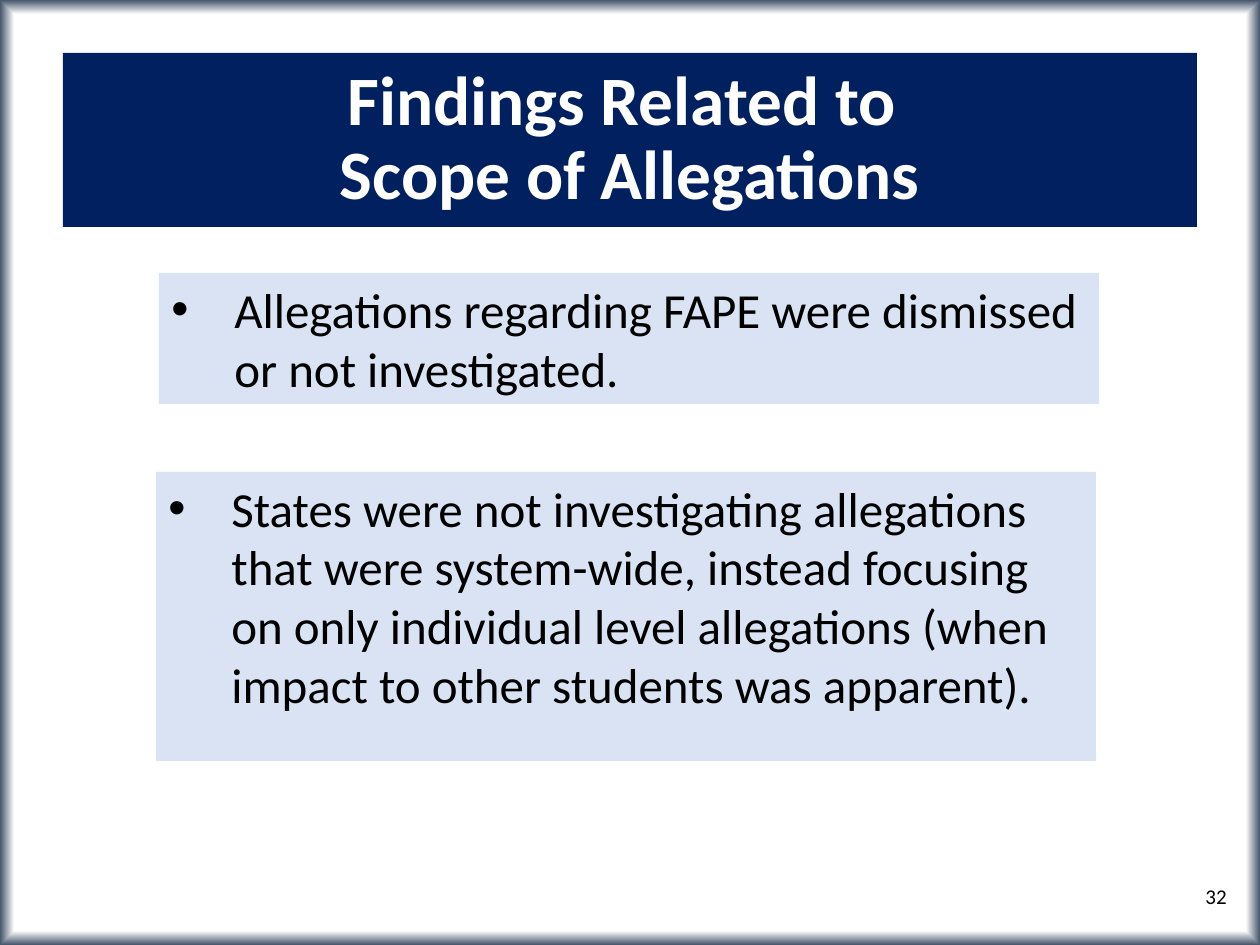
import dataclasses

import lxml.etree
import pptx
import pptx.dml.color
import pptx.enum.dml
import pptx.enum.shapes
import pptx.enum.text
import pptx.oxml.ns
import pptx.util

PX_PER_INCH = 126
ALIGN = pptx.enum.text.PP_ALIGN
ANCHOR = pptx.enum.text.MSO_ANCHOR


@dataclasses.dataclass(frozen=True)
class Theme:
    font: str = "Calibri"
    navy: str = "002060"
    pale_blue: str = "DAE3F3"
    slate: str = "44546A"
    white: str = "FFFFFF"
    black: str = "000000"
    title_size: float = 39.6
    body_size: float = 28
    number_size: float = 12


THEME = Theme()


def px(length):
    return pptx.util.Emu(round(length * pptx.util.Inches(1) / PX_PER_INCH))


def rgb(color):
    return pptx.dml.color.RGBColor.from_string(color)


def add_panel(slide, box, color):
    shape = slide.shapes.add_shape(
        pptx.enum.shapes.MSO_SHAPE.RECTANGLE, *map(px, box))
    shape.shadow.inherit = False
    shape.fill.solid()
    shape.fill.fore_color.rgb = rgb(color)
    shape.line.fill.background()
    return shape


def write(shape, text, size, color, alignment, anchor=ANCHOR.TOP, bold=False):
    """Set the text of a shape and return its paragraph."""
    text_frame = shape.text_frame
    text_frame.word_wrap = True
    text_frame.vertical_anchor = anchor
    text_frame.text = text
    paragraph = text_frame.paragraphs[0]
    paragraph.alignment = alignment
    for run in paragraph.runs:
        run.font.name = THEME.font
        run.font.size = pptx.util.Pt(size)
        run.font.bold = bold
        run.font.color.rgb = rgb(color)
    return paragraph


def add_bullet(paragraph, indent):
    properties = paragraph._p.get_or_add_pPr()
    properties.set("marL", str(px(indent)))
    properties.set("indent", str(-px(indent)))
    qn = pptx.oxml.ns.qn
    lxml.etree.SubElement(properties, qn("a:buFont"), typeface="Arial")
    lxml.etree.SubElement(properties, qn("a:buChar"), char="•")


def paint_background(slide):
    """White, shading to slate along all four edges."""
    fill = slide.background.fill
    fill.gradient()
    stops = ((0.97, THEME.white), (1, THEME.slate))
    for stop, (position, color) in zip(fill.gradient_stops, stops):
        stop.position = position
        stop.color.rgb = rgb(color)
    qn = pptx.oxml.ns.qn
    linear = next(slide.background._cSld.iter(qn("a:lin")))
    shading = linear.makeelement(qn("a:path"), {"path": "shape"})
    middle = dict.fromkeys("ltrb", "50000")
    lxml.etree.SubElement(shading, qn("a:fillToRect"), middle)
    linear.getparent().replace(linear, shading)


def add_title(slide, box, text):
    shape = add_panel(slide, box, THEME.navy)
    paragraph = write(shape, text, THEME.title_size, THEME.white,
                      ALIGN.CENTER, ANCHOR.MIDDLE, bold=True)
    paragraph.line_spacing = 0.9


def add_finding(slide, box, text):
    shape = add_panel(slide, box, THEME.pale_blue)
    paragraph = write(shape, text, THEME.body_size, THEME.black, ALIGN.LEFT)
    add_bullet(paragraph, 63)


def add_slide_number(slide, box, text):
    shape = slide.shapes.add_textbox(*map(px, box))
    write(shape, text, THEME.number_size, THEME.black, ALIGN.RIGHT)


def main():
    presentation = pptx.Presentation()
    presentation.slide_width = px(1260)
    presentation.slide_height = px(945)
    slide = presentation.slides.add_slide(presentation.slide_layouts[6])

    paint_background(slide)
    add_title(slide, (63, 53, 1134, 174),
              "Findings Related to \vScope of Allegations")
    add_finding(slide, (159, 273, 940, 131),
                "Allegations regarding FAPE were dismissed or not investigated.")
    add_finding(slide, (156, 472, 940, 289),
                "States were not investigating allegations that were "
                "system-wide, instead focusing on only individual level "
                "allegations (when impact to other students was apparent).")
    add_slide_number(slide, (955, 877, 284, 50), "32")

    presentation.save("out.pptx")


if __name__ == "__main__":
    main()
